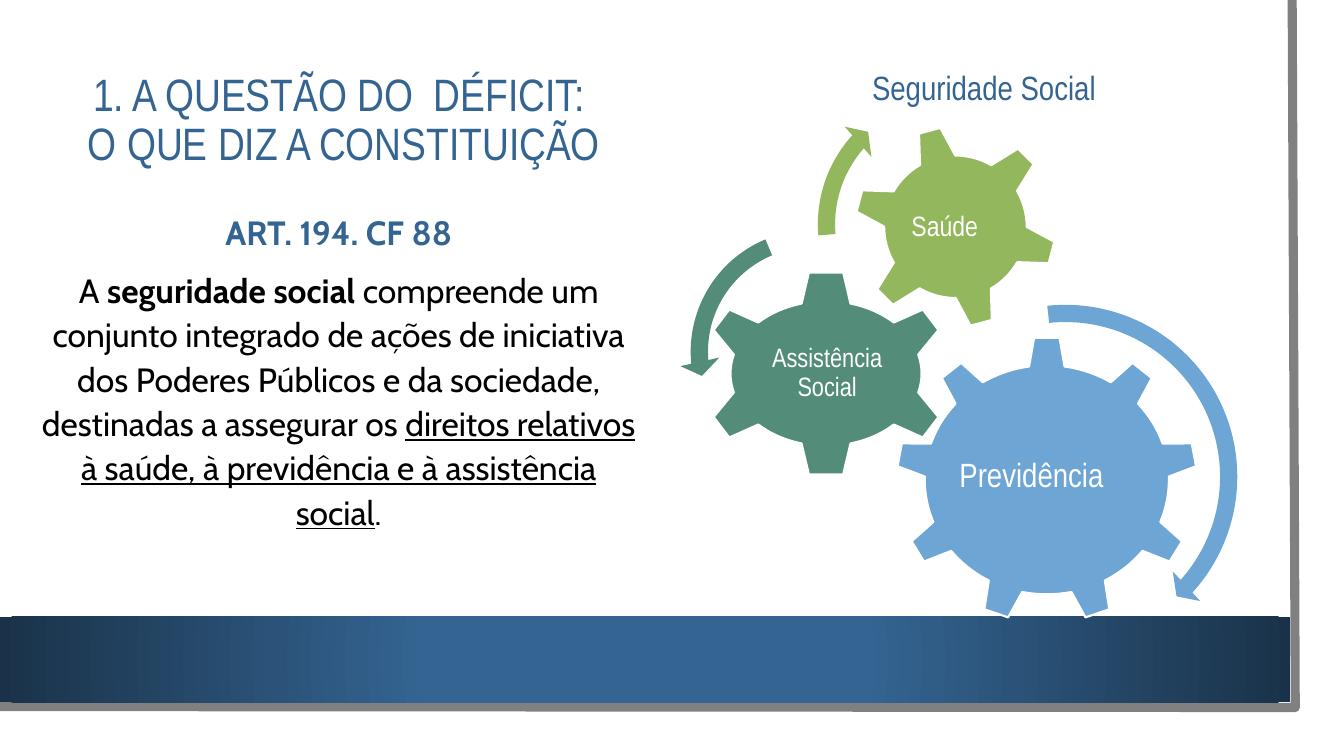
from lxml import etree
from pptx import Presentation
from pptx.dml.color import RGBColor
from pptx.enum.shapes import MSO_SHAPE
from pptx.enum.text import MSO_ANCHOR, MSO_AUTO_SIZE, PP_ALIGN
from pptx.oxml.ns import qn
from pptx.util import Pt

RECTANGLE = MSO_SHAPE.RECTANGLE
GEAR_6, GEAR_9 = MSO_SHAPE.GEAR_6, MSO_SHAPE.GEAR_9
ARROW, LEFT_ARROW = MSO_SHAPE.CIRCULAR_ARROW, MSO_SHAPE.LEFT_CIRCULAR_ARROW
TOP, MIDDLE, BOTTOM = MSO_ANCHOR.TOP, MSO_ANCHOR.MIDDLE, MSO_ANCHOR.BOTTOM
CENTER, RIGHT = PP_ALIGN.CENTER, PP_ALIGN.RIGHT
NO_AUTOFIT = MSO_AUTO_SIZE.NONE

COLORS = {
    "white": "FFFFFF", "black": "000000", "edge": "808080",
    "navy": "346492", "night": "1A3249",
    "blue": "6DA5D4", "teal": "538C79", "green": "93B75D",
}
NARROW, CABIN = "Arial Narrow", "Cabin"


class SlideBuilder:
    """Hold the style and the current slide, and add each kind of element."""

    def __init__(self, presentation):
        self.slide = presentation.slides.add_slide(presentation.slide_layouts[1])
        self.shapes = self.slide.shapes

    def color(self, name):
        return RGBColor.from_string(COLORS[name])

    def shape(self, kind, box, fill, outline=None, rotation=0, adjustments=()):
        shape = self.shapes.add_shape(kind, *map(Pt, box))
        shape.shadow.inherit = False
        shape.rotation = rotation
        shape.fill.solid()
        shape.fill.fore_color.rgb = self.color(fill)
        if outline:
            shape.line.color.rgb = self.color(outline)
            shape.line.width = Pt(1.5)
        else:
            shape.line.fill.background()
        for index, value in enumerate(adjustments):
            shape.adjustments[index] = value
        return shape

    def glowing_band(self, box, inner, outer):
        band = self.shape(RECTANGLE, box, inner)
        band.fill.gradient()
        stops = band.fill.gradient_stops
        for stop, position, name in zip(stops, (0.34, 1), (inner, outer)):
            stop.position = position
            stop.color.rgb = self.color(name)
        gradient = band._element.spPr.find(qn("a:gradFill"))
        gradient.remove(gradient.find(qn("a:lin")))
        path = etree.SubElement(gradient, qn("a:path"), {"path": "circle"})
        etree.SubElement(path, qn("a:fillToRect"), dict.fromkeys("ltrb", "50000"))

    def open_line(self, points, color, width):
        start, *others = [tuple(map(Pt, point)) for point in points]
        builder = self.shapes.build_freeform(*start)
        builder.add_line_segments(others, close=False)
        line = builder.convert_to_shape()
        line.shadow.inherit = False
        line.fill.background()
        line.line.color.rgb = self.color(color)
        line.line.width = Pt(width)

    def frame(self, shape, anchor, margins):
        frame = shape.text_frame
        frame.word_wrap = True
        frame.auto_size = NO_AUTOFIT
        frame.vertical_anchor = anchor
        (frame.margin_left, frame.margin_top,
         frame.margin_right, frame.margin_bottom) = map(Pt, margins)
        return frame

    def run(self, paragraph, text, font, size, color, bold=False, underline=False):
        run = paragraph.add_run()
        run.text = text
        run.font.name = font
        run.font.size = Pt(size)
        run.font.color.rgb = self.color(color)
        run.font.bold = bold
        run.font.underline = underline

    def label(self, text, box, size, color="white", spacing=0.9,
              align=CENTER, right_margin=2):
        shape = self.shapes.add_textbox(*map(Pt, box))
        frame = self.frame(shape, MIDDLE, (2, 2, right_margin, 2))
        paragraph = frame.paragraphs[0]
        paragraph.alignment = align
        paragraph.line_spacing = spacing
        self.run(paragraph, text, NARROW, size, color)

    def placeholder(self, index, box):
        shape = self.slide.placeholders[index]
        shape.left, shape.top, shape.width, shape.height = map(Pt, box)
        self.shapes._spTree.append(shape._element)
        return shape

    def title(self, lines, box, bottom_margin):
        frame = self.frame(self.placeholder(0, box), BOTTOM, (7.2, 3.6, 7.2, bottom_margin))
        paragraph = frame.paragraphs[0]
        paragraph.alignment = CENTER
        paragraph.line_spacing = 0.9
        for number, line in enumerate(lines):
            if number:
                paragraph.add_line_break()
            self.run(paragraph, line, NARROW, 32.4, "navy")

    def body(self, paragraphs, box):
        frame = self.frame(self.placeholder(1, box), TOP, (7.2, 3.6, 7.2, 3.6))
        for number, runs in enumerate(paragraphs):
            paragraph = frame.add_paragraph() if number else frame.paragraphs[0]
            properties = paragraph._p.get_or_add_pPr()
            properties.set("marL", "0")
            properties.set("indent", "0")
            etree.SubElement(properties, qn("a:buNone"))
            paragraph.alignment = CENTER
            paragraph.line_spacing = 1.1
            paragraph.space_before = Pt(10 if number else 0)
            for text, color, bold, underline in runs:
                self.run(paragraph, text, CABIN, 24, color, bold, underline)


def main():
    presentation = Presentation()
    presentation.slide_width, presentation.slide_height = Pt(960), Pt(540)
    builder = SlideBuilder(presentation)

    builder.shape(RECTANGLE, (0, 0, 943.2, 523.4), "white")
    builder.open_line([(923, 0), (925.2, 505.4), (-2.2, 504.7)], "edge", 6.5)
    builder.glowing_band((0, 440.6, 921.6, 61.2), "navy", "night")

    builder.title(["1. A QUESTÃO DO  DÉFICIT: ", "O QUE DIZ A CONSTITUIÇÃO"],
                  (40.3, 46.1, 411.1, 112.3), 37)

    gears = [
        (GEAR_9, (640.1, 240.5, 215.3, 204.5), "blue", 0),
        (GEAR_6, (499.7, 193, 180.7, 147.6), "teal", 0),
        (GEAR_6, (609.8, 89.3, 145.4, 145.4), "green", 345),
    ]
    for kind, box, fill, rotation in gears:
        builder.shape(kind, box, fill, "white", rotation)
    builder.label("Previdência", (682.6, 288, 130.3, 105.1), 24, right_margin=24)
    builder.label("Assistência Social", (542.2, 230.4, 97.2, 72.7), 19)
    builder.label("Saúde", (641.5, 121.7, 82.1, 82.1), 20, align=RIGHT, right_margin=25)

    arrows = [
        (ARROW, (630, 209.5, 262.1, 262.1), "blue", (0.047, 2.99, 25.275, 158.37, 0.055)),
        (LEFT_ARROW, (485.3, 156.2, 190.1, 190.1), "teal",
         (0.065, 4.3, 104.891, 148.378, 0.075)),
        (ARROW, (576, 57.6, 205.2, 205.2), "green", (0.06, 3.941, 133.138, 105.082, 0.07)),
    ]
    for kind, box, fill, adjustments in arrows:
        builder.shape(kind, box, fill, adjustments=adjustments)

    builder.body([
        [("ART. 194. CF 88", "navy", True, False)],
        [("A ", "black", False, False),
         ("seguridade social ", "black", True, False),
         ("compreende um conjunto integrado de ações de iniciativa dos Poderes "
          "Públicos e da sociedade, destinadas a assegurar os ", "black", False, False),
         ("direitos relativos à saúde, à previdência e à assistência social",
          "black", False, True),
         (".", "black", False, False)],
    ], (20.9, 144.7, 442.1, 251.3))
    builder.label("Seguridade Social", (545.8, 43.9, 313.9, 36.7), 24, "navy", 1)

    presentation.save("out.pptx")


if __name__ == "__main__":
    main()
